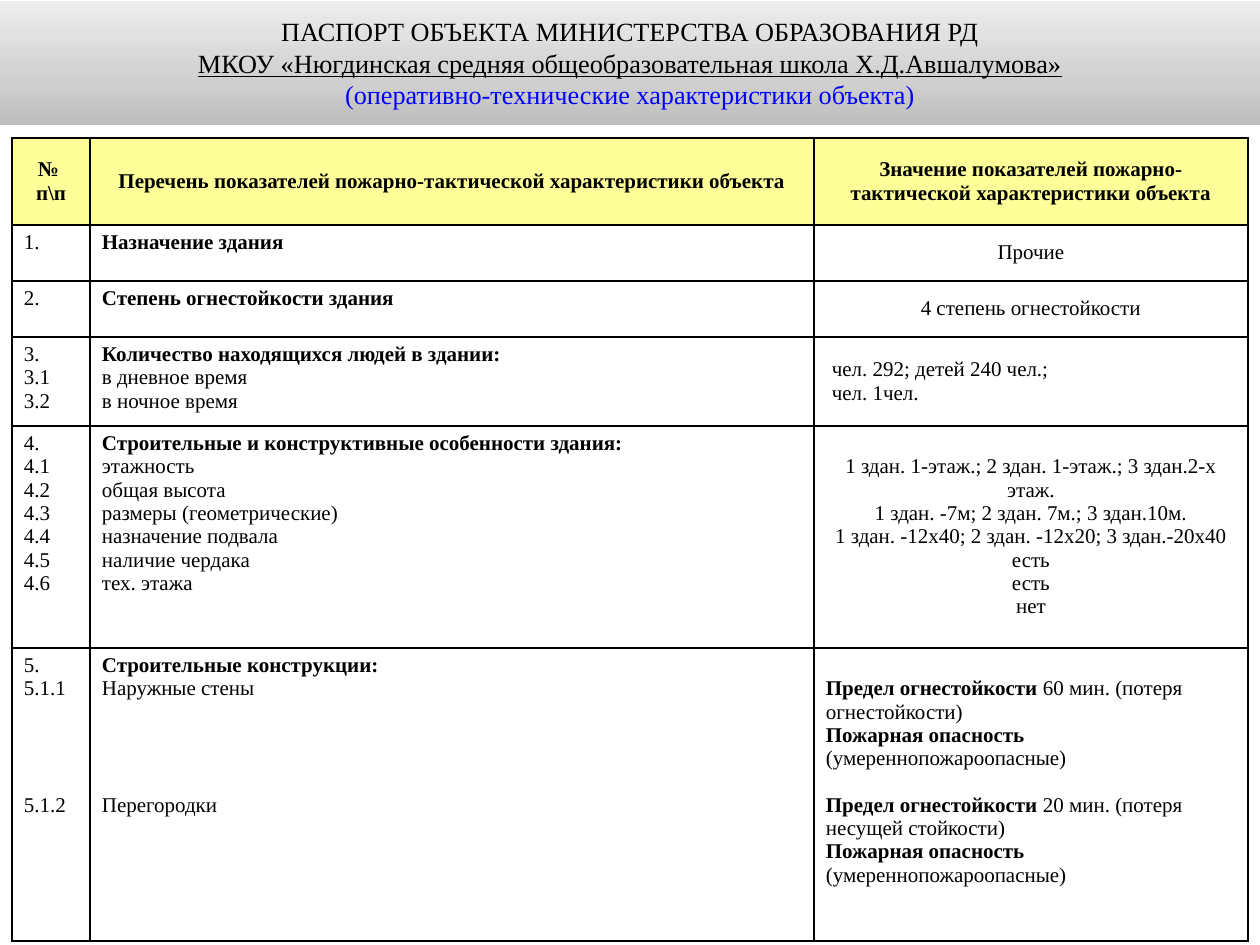
from copy import deepcopy
from lxml.etree import SubElement
from pptx import Presentation
from pptx.dml.color import RGBColor
from pptx.enum.shapes import MSO_SHAPE
from pptx.enum.text import MSO_ANCHOR, PP_ALIGN
from pptx.oxml.ns import qn
from pptx.util import Emu, Pt

LINE = 23.25
MID, TOP = MSO_ANCHOR.MIDDLE, MSO_ANCHOR.TOP
LEFT, CENTER = PP_ALIGN.LEFT, PP_ALIGN.CENTER


def px(n):
    return Emu(round(n * 914400 / 126))


def color(code):
    return RGBColor.from_string(code)


class Deck:
    face = "Times New Roman"
    ink = "000000"

    def __init__(self, wide, high):
        self.prs = Presentation()
        self.prs.slide_width, self.prs.slide_height = px(wide), px(high)
        self.slide = self.prs.slides.add_slide(self.prs.slide_layouts[6])

    def style(self, para, size, align, ink=None):
        para.alignment = align
        font = para.font
        font.name, font.size = self.face, Pt(size)
        font.color.rgb = color(ink or self.ink)
        return font

    def band(self, x, y, w, h, stops, lines):
        box = self.slide.shapes.add_shape(
            MSO_SHAPE.RECTANGLE, px(x), px(y), px(w), px(h))
        box.shadow.inherit = False
        box.line.fill.background()
        box.fill.gradient()
        box.fill.gradient_angle = 90
        group = box._element.spPr.find(".//" + qn("a:gsLst"))
        group.insert(1, deepcopy(group[0]))
        for stop, (pos, code) in zip(box.fill.gradient_stops, stops):
            stop.position = pos
            stop.color.rgb = color(code)
        frame = box.text_frame
        frame.word_wrap = True
        frame.vertical_anchor = MID
        for i, (text, ink, under) in enumerate(lines):
            para = frame.add_paragraph() if i else frame.paragraphs[0]
            para.add_run().text = text
            self.style(para, 15, CENTER, ink).underline = under

    def cell(self, cell, lines, fill, anchor, align, inset=12):
        cell.fill.solid()
        cell.fill.fore_color.rgb = color(fill)
        cell.vertical_anchor = anchor
        cell.margin_left, cell.margin_right = px(inset), px(12)
        cell.margin_top = cell.margin_bottom = px(6)
        self.edge(cell)
        frame = cell.text_frame
        for i, line in enumerate(lines):
            text = line.lstrip("^")
            gap = (len(line) - len(text)) * LINE
            para = frame.add_paragraph() if i else frame.paragraphs[0]
            if gap and i:
                para.space_before = Pt(round(gap * 72 / 126, 1))
            elif gap:
                cell.margin_top = px(6 + gap)
            bold, mark, plain = text.rpartition("*")
            font = self.style(para, 12, align)
            if bold and plain:
                for part, heavy in ((bold, True), (plain, False)):
                    run = para.add_run()
                    run.text, run.font.bold = part, heavy
            else:
                para.add_run().text = bold or plain
                font.bold = bool(mark)

    def edge(self, cell):
        props = cell._tc.get_or_add_tcPr()
        for i, side in enumerate(("lnL", "lnR", "lnT", "lnB")):
            line = SubElement(props, qn("a:" + side), w=str(Pt(1)))
            fill = SubElement(line, qn("a:solidFill"))
            SubElement(fill, qn("a:srgbClr"), val=self.ink)
            props.insert(i, line)

    def table(self, x, y, cols, highs, head, rows):
        grid = self.slide.shapes.add_table(
            len(highs), len(cols), px(x), px(y),
            px(sum(cols)), px(sum(highs))).table
        grid.first_row = grid.horz_banding = False
        for col, wide in zip(grid.columns, cols):
            col.width = px(wide)
        for row, high in zip(grid.rows, highs):
            row.height = px(high)
        for c, lines in enumerate(head):
            self.cell(grid.cell(0, c), lines, "FFFF99", MID, CENTER)
        for r, (nums, names, vals, look) in enumerate(rows, 1):
            self.cell(grid.cell(r, 0), nums, "FFFFFF", TOP, LEFT)
            self.cell(grid.cell(r, 1), names, "FFFFFF", TOP, LEFT)
            self.cell(grid.cell(r, 2), vals, "FFFFFF", *look)


HEAD = [
    ["№ *", "п\\п*"],
    ["Перечень показателей пожарно-тактической характеристики объекта*"],
    ["Значение показателей пожарно-тактической характеристики объекта*"],
]
ROWS = [
    (["1."], ["Назначение здания*"], ["Прочие"], (MID, CENTER)),
    (["2."], ["Степень огнестойкости здания*"],
     ["4 степень огнестойкости"], (MID, CENTER)),
    (["3.", "3.1", "3.2"],
     ["Количество находящихся людей в здании:*",
      "в дневное время", "в ночное время"],
     ["чел. 292; детей 240 чел.;", "чел. 1чел."], (MID, LEFT, 18)),
    (["4."] + [f"4.{n}" for n in range(1, 7)],
     ["Строительные и конструктивные особенности здания:*",
      "этажность", "общая высота", "размеры (геометрические)",
      "назначение подвала", "наличие чердака", "тех. этажа"],
     ["^1 здан. 1-этаж.; 2 здан. 1-этаж.; 3 здан.2-х этаж.",
      "1 здан. -7м; 2 здан. 7м.; 3 здан.10м.",
      "1 здан. -12х40; 2 здан. -12х20; 3 здан.-20х40",
      "есть", "есть", "нет"], (TOP, CENTER)),
    (["5.", "5.1.1", "^^^^5.1.2"],
     ["Строительные конструкции:*", "Наружные стены", "^^^^Перегородки"],
     ["^Предел огнестойкости *60 мин. (потеря огнестойкости)",
      "Пожарная опасность *(умереннопожароопасные)",
      "^Предел огнестойкости *20 мин. (потеря несущей стойкости)",
      "Пожарная опасность*", "(умереннопожароопасные)"], (TOP, LEFT)),
]
TITLE = [
    ("ПАСПОРТ ОБЪЕКТА МИНИСТЕРСТВА ОБРАЗОВАНИЯ РД", "000000", False),
    ("МКОУ «Нюгдинская средняя общеобразовательная школа Х.Д.Авшалумова»",
     "000000", True),
    ("(оперативно-технические характеристики объекта)", "0000FF", False),
]


def main():
    deck = Deck(1260, 945)
    deck.table(12, 138, [78, 724, 434], [87, 56, 56, 89, 222, 293],
               HEAD, ROWS)
    deck.band(0, 1, 1260, 124,
              [(0, "BCBCBC"), (0.35, "D0D0D0"), (1, "EDEDED")], TITLE)
    deck.prs.save("out.pptx")


if __name__ == "__main__":
    main()
